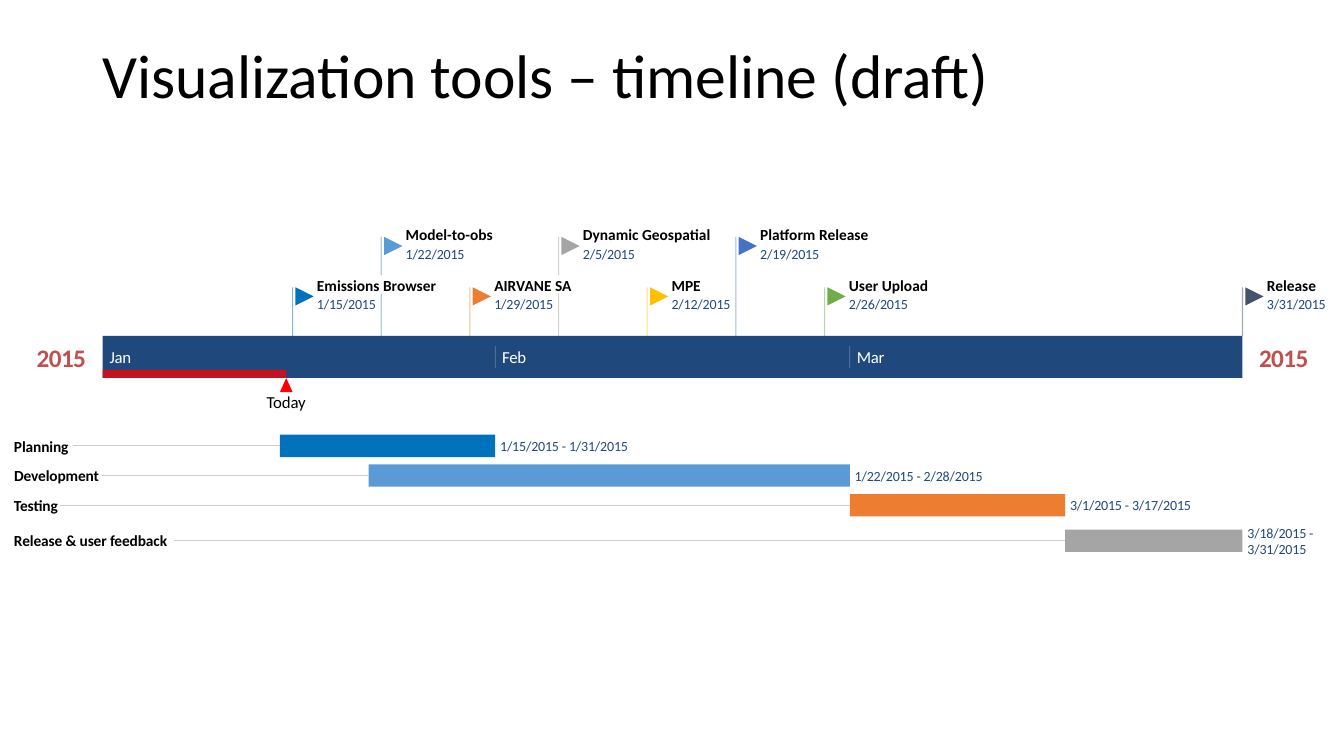
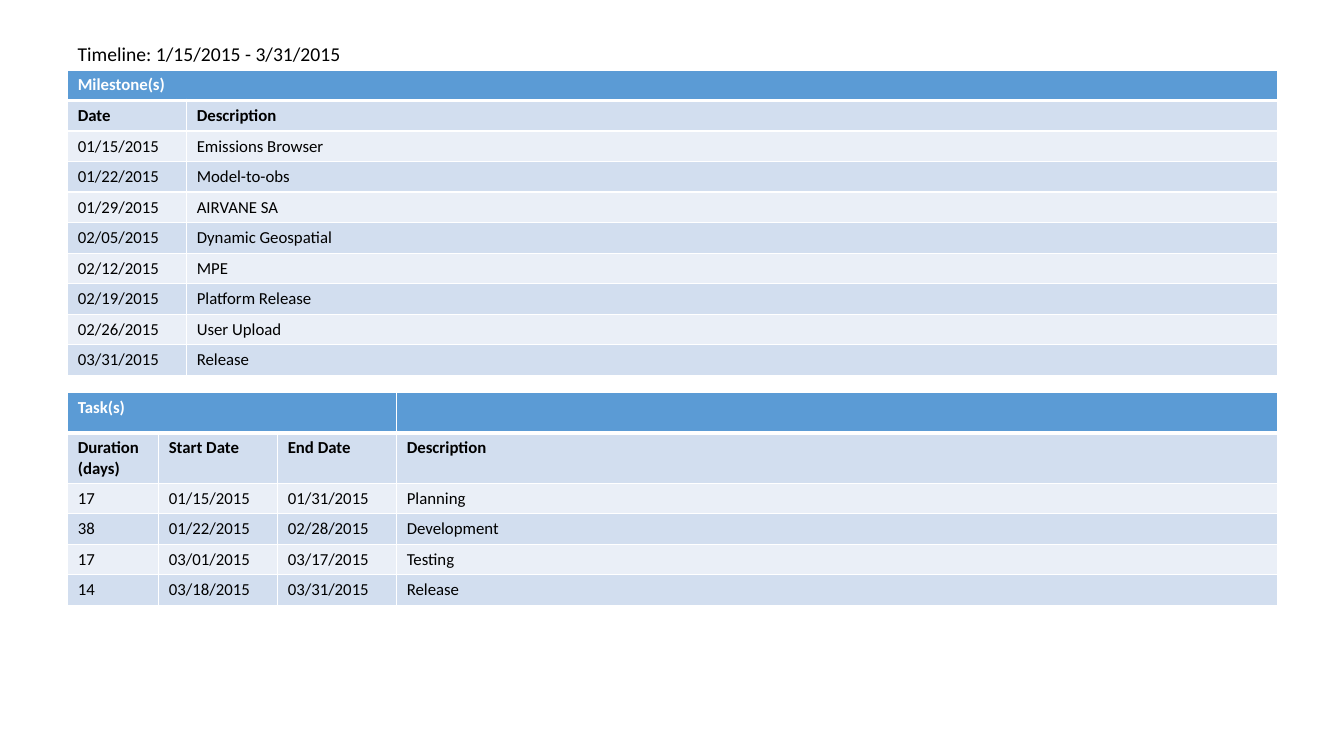
import dataclasses

import lxml.etree
import pptx
import pptx.dml.color
import pptx.enum.dml
import pptx.enum.shapes
import pptx.enum.text
import pptx.oxml
import pptx.oxml.ns
import pptx.util

Pt = pptx.util.Pt
SHAPES = pptx.enum.shapes.MSO_SHAPE
ALIGN = pptx.enum.text.PP_ALIGN
ANCHOR = pptx.enum.text.MSO_ANCHOR


@dataclasses.dataclass(frozen=True)
class Theme:
    font: str = "Calibri"
    black: str = "000000"
    white: str = "FFFFFF"
    band: str = "1F497D"
    date: str = "1F497E"
    year: str = "C0504D"
    today: str = "FF0000"
    guide: str = "CCCCCC"
    header: str = "5B9BD5"
    row_dark: str = "D2DEEF"
    row_light: str = "EAEFF7"
    title_size: float = 44
    year_size: float = 18
    heading_size: float = 14
    body_size: float = 12
    label_size: float = 11
    date_size: float = 10
    tracking: float = -0.1


@dataclasses.dataclass(frozen=True)
class Box:
    left: float
    top: float
    width: float
    height: float

    @property
    def right(self):
        return self.left + self.width

    @property
    def bottom(self):
        return self.top + self.height

    @property
    def middle(self):
        return self.top + self.height / 2

    def lengths(self):
        return Pt(self.left), Pt(self.top), Pt(self.width), Pt(self.height)


THEME = Theme()
YEAR = "2015"
DAYS = 90
TODAY = 14.5
MONTHS = [("Jan", 0), ("Feb", 31), ("Mar", 59)]
UPPER, LOWER = 0, 36

MILESTONES = [
    ("01/15/2015", "Emissions Browser", LOWER, 87, "0072BC"),
    ("01/22/2015", "Model-to-obs", UPPER, 65, "5B9BD5"),
    ("01/29/2015", "AIRVANE SA", LOWER, 62, "ED7D31"),
    ("02/05/2015", "Dynamic Geospatial", UPPER, 93, "A5A5A5"),
    ("02/12/2015", "MPE", LOWER, 26, "FFC000"),
    ("02/19/2015", "Platform Release", UPPER, 80, "4472C4"),
    ("02/26/2015", "User Upload", LOWER, 59, "70AD47"),
    ("03/31/2015", "Release", LOWER, 38, "44546A"),
]
TASKS = [
    ("01/15/2015", "01/31/2015", "Planning", "Planning", 42, "0072BC"),
    ("01/22/2015", "02/28/2015", "Development", "Development", 63, "5B9BD5"),
    ("03/01/2015", "03/17/2015", "Testing", "Testing", 33, "ED7D31"),
    ("03/18/2015", "03/31/2015", "Release", "Release & user feedback", 114, "A5A5A5"),
]


def rgb(color):
    return pptx.dml.color.RGBColor.from_string(color)


def day_of_year(date):
    month, day, _ = map(int, date.split("/"))
    return MONTHS[month - 1][1] + day


def short_date(date):
    return "/".join(part.lstrip("0") for part in date.split("/"))


def day_position(band, day):
    return band.left + band.width * day / DAYS


def set_opacity(fill, percent):
    color = fill._xPr.find(".//" + pptx.oxml.ns.qn("a:srgbClr"))
    alpha = lxml.etree.SubElement(color, pptx.oxml.ns.qn("a:alpha"))
    alpha.set("val", str(percent * 1000))


def style_font(font, size, color, bold=False):
    font.name = THEME.font
    font.size = Pt(size)
    font.bold = bold
    font.color.rgb = rgb(color)


def add_text(slide, box, text, size, color, bold=False, align=ALIGN.LEFT,
             anchor=ANCHOR.MIDDLE, inset=(0, 0), tracking=THEME.tracking):
    shape = slide.shapes.add_textbox(*box.lengths())
    frame = shape.text_frame
    frame.word_wrap = True
    frame.vertical_anchor = anchor
    frame.margin_left = frame.margin_right = Pt(inset[0])
    frame.margin_top = frame.margin_bottom = Pt(inset[1])
    paragraph = frame.paragraphs[0]
    paragraph.alignment = align
    run = paragraph.add_run()
    run.text = text
    style_font(paragraph.font, size, color, bold)
    if tracking:
        run._r.get_or_add_rPr().set("spc", str(round(tracking * 100)))
    return shape


def add_block(slide, kind, box, color, opacity=100):
    shape = slide.shapes.add_shape(kind, *box.lengths())
    shape.shadow.inherit = False
    shape.fill.solid()
    shape.fill.fore_color.rgb = rgb(color)
    shape.line.fill.background()
    if opacity < 100:
        set_opacity(shape.fill, opacity)
    return shape


def add_line(slide, start, end, color, width=0.75, opacity=100):
    line = slide.shapes.add_connector(
        pptx.enum.shapes.MSO_CONNECTOR.STRAIGHT, *map(Pt, start + end))
    line.line.width = Pt(width)
    line.line.color.rgb = rgb(color)
    lxml.etree.SubElement(line._element.spPr, pptx.oxml.ns.qn("a:effectLst"))
    if opacity < 100:
        color_node = line._element.spPr.find(".//" + pptx.oxml.ns.qn("a:srgbClr"))
        alpha = lxml.etree.SubElement(color_node, pptx.oxml.ns.qn("a:alpha"))
        alpha.set("val", str(opacity * 1000))
    return line


def add_milestones(slide, area, band):
    previous_right = 0
    for date, name, level, label_width, color in MILESTONES:
        stem = day_position(band, day_of_year(date))
        top = area.top + level
        label_left = stem + 17.4
        spans = [(top, area.bottom)]
        if level == UPPER and previous_right > stem:
            gap = area.top + LOWER - 8.6
            spans = [(top, gap), (gap + 13, area.bottom)]
        for start, end in spans:
            add_line(slide, (stem, start), (stem, end), color, opacity=50)
        flag = add_block(slide, SHAPES.FLOWCHART_MERGE,
                         Box(stem + 2, top, 13, 13), color)
        flag.rotation = 270
        add_text(slide, Box(label_left, top - 8.6, label_width, 13.7), name,
                 THEME.label_size, THEME.black, bold=True, tracking=0)
        add_text(slide, Box(label_left, top + 5.8, 46, 12.2), short_date(date),
                 THEME.date_size, THEME.date)
        previous_right = label_left + label_width


def add_month_band(slide, band):
    for center in (band.left - 29.5, band.right + 29.5):
        add_text(slide, Box(center - 20, band.middle - 11, 40, 22), YEAR,
                 THEME.year_size, THEME.year, bold=True, align=ALIGN.CENTER,
                 tracking=-0.4)
    add_block(slide, SHAPES.RECTANGLE, band, THEME.band)
    today = day_position(band, TODAY)
    add_block(slide, SHAPES.RECTANGLE,
              Box(band.left, band.bottom - 5.8, today - band.left, 5.8),
              THEME.today, opacity=75)
    add_block(slide, SHAPES.ISOSCELES_TRIANGLE,
              Box(today - 4.5, band.bottom, 9, 10), THEME.today)
    add_text(slide, Box(today - 20, band.bottom + 10, 40, 14.6), "Today",
             THEME.body_size, THEME.black, align=ALIGN.CENTER)
    for name, first_day in MONTHS:
        left = day_position(band, first_day)
        if first_day:
            add_line(slide, (left, band.middle - 8), (left, band.middle + 8),
                     THEME.white, width=0.5, opacity=30)
        add_text(slide, Box(left + 5, band.middle - 7.3, 30, 14.6), name,
                 THEME.body_size, THEME.white, tracking=-0.2)


def add_task_bars(slide, area, band):
    pitch, bar_height = 21.2, 16
    for index, (start, end, _, name, label_width, color) in enumerate(TASKS):
        last = index == len(TASKS) - 1
        middle = area.top + bar_height / 2 + index * pitch + (4.2 if last else 0)
        left = day_position(band, day_of_year(start) - 1)
        right = day_position(band, day_of_year(end))
        bar = add_block(slide, SHAPES.RECTANGLE,
                        Box(left, middle - bar_height / 2, right - left, bar_height),
                        color)
        label = add_text(slide, Box(area.left, middle - 7, label_width, 14), name,
                         THEME.label_size, THEME.black, bold=True)
        guide = add_line(slide, (area.left + label_width, middle), (left, middle),
                         THEME.guide)
        guide.begin_connect(label, 3)
        guide.end_connect(bar, 1)
        date_width = min(100, area.right - right - 3.5)
        add_text(slide, Box(right + 3.5, middle - 12.2, date_width, 24.4),
                 f"{short_date(start)} - {short_date(end)}",
                 THEME.date_size, THEME.date)


def border_cell(cell, bottom=1, top=1):
    properties = cell._tc.get_or_add_tcPr()
    sides = (("L", 1), ("R", 1), ("T", top), ("B", bottom))
    for position, (side, width) in enumerate(sides):
        properties.insert(position, pptx.oxml.parse_xml(
            f'<a:ln{side} {pptx.oxml.ns.nsdecls("a")} w="{Pt(width)}">'
            f'<a:solidFill><a:srgbClr val="{THEME.white}"/></a:solidFill></a:ln{side}>'))


def add_data_table(slide, box, title, title_span, widths, rows, title_height):
    rows = [[title] + [""] * (len(widths) - 1)] + rows
    table = slide.shapes.add_table(len(rows), len(widths), *box.lengths()).table
    for column, width in zip(table.columns, widths):
        column.width = Pt(width)
    for row_index, values in enumerate(rows):
        is_title = row_index == 0
        table.rows[row_index].height = Pt(title_height if is_title else 21.8)
        band_color = THEME.row_dark if row_index % 2 else THEME.row_light
        for cell, value in zip(table.rows[row_index].cells, values):
            cell.text = value
            cell.fill.solid()
            cell.fill.fore_color.rgb = rgb(THEME.header if is_title else band_color)
            border_cell(cell, bottom=3 if is_title else 1, top=3 if row_index == 1 else 1)
            style_font(cell.text_frame.paragraphs[0].font, THEME.body_size,
                       THEME.white if is_title else THEME.black, row_index < 2)
    table.cell(0, 0).merge(table.cell(0, title_span - 1))


def build_timeline_slide(slide):
    band = Box(73.3, 240, 814.2, 30)
    title = add_text(slide, Box(66, 28.8, 828, 104.4),
                     "Visualization tools – timeline (draft)", THEME.title_size,
                     THEME.black, anchor=ANCHOR.TOP, inset=(7.2, 3.6), tracking=0)
    title.text_frame.paragraphs[0].line_spacing = 0.9
    add_milestones(slide, Box(band.left, 169.2, band.width, band.top - 169.2), band)
    add_month_band(slide, band)
    add_task_bars(slide, Box(10, 310.5, 932, 84), band)


def build_tables_slide(slide):
    left, width = 48.4, 864
    first, last = MILESTONES[0][0], MILESTONES[-1][0]
    add_text(slide, Box(left, 26, 400, 24.3),
             f"Timeline: {short_date(first)} - {short_date(last)}",
             THEME.heading_size, THEME.black, inset=(7.2, 3.6), tracking=0)
    milestone_rows = [[date, name] for date, name, *_ in MILESTONES]
    add_data_table(slide, Box(left, 50, width, 218), "Milestone(s)", 2, (85, 779),
                   [["Date", "Description"]] + milestone_rows, 21.8)
    task_rows = [[str(day_of_year(end) - day_of_year(start) + 1), start, end, name]
                 for start, end, name, *_ in TASKS]
    add_data_table(slide, Box(left, 280, width, 153), "Task(s)", 3, (65, 85, 85, 629),
                   [["Duration\v(days)", "Start Date", "End Date", "Description"]]
                   + task_rows, 29.2)


def main():
    presentation = pptx.Presentation()
    presentation.slide_width = Pt(960)
    presentation.slide_height = Pt(540)
    for build in (build_timeline_slide, build_tables_slide):
        build(presentation.slides.add_slide(presentation.slide_layouts[6]))
    presentation.save("out.pptx")


if __name__ == "__main__":
    main()
